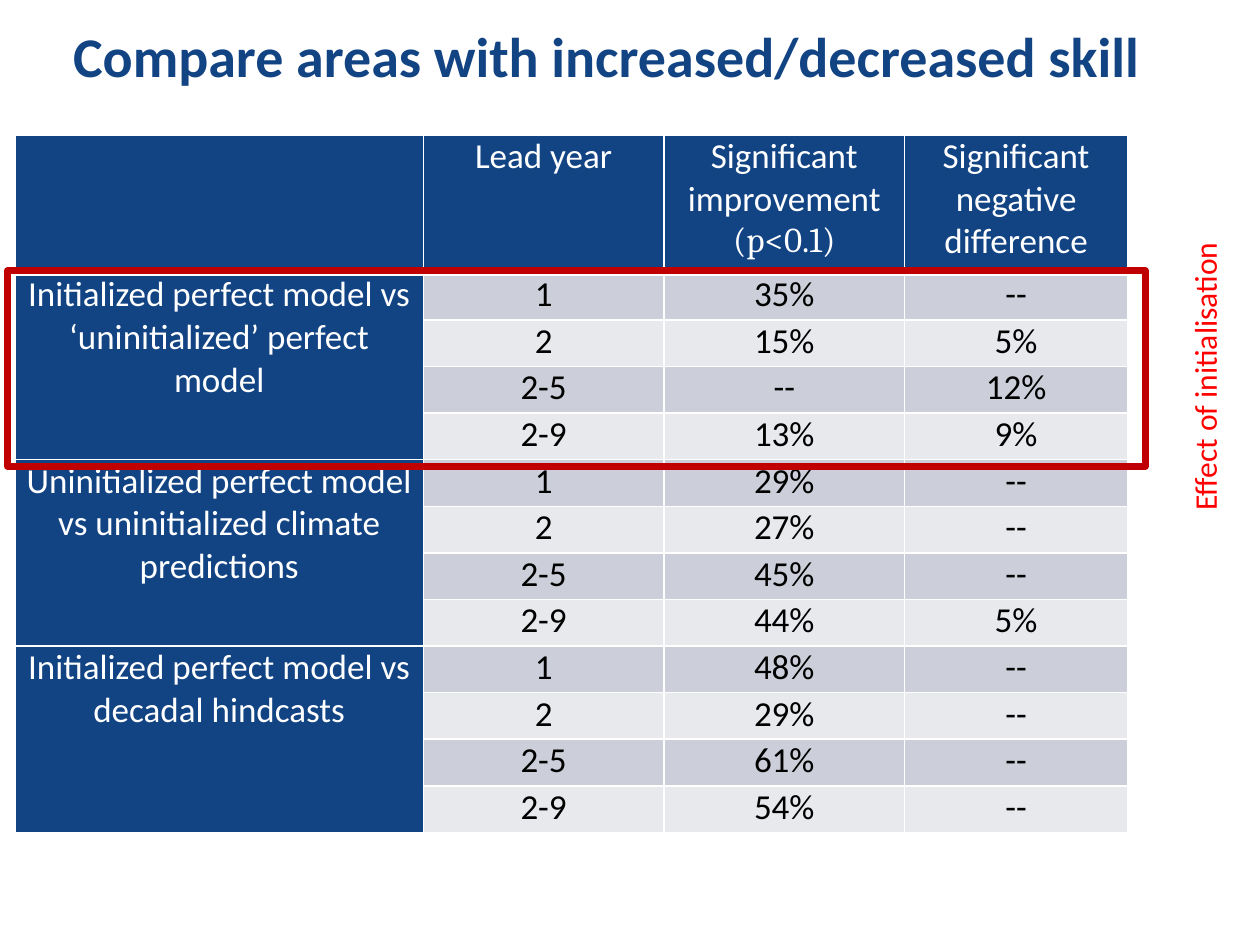
from lxml import etree
from pptx import Presentation
from pptx.dml.color import RGBColor
from pptx.enum.shapes import MSO_SHAPE
from pptx.enum.text import MSO_ANCHOR, PP_ALIGN
from pptx.oxml.ns import qn
from pptx.util import Inches, Pt

CENTER, LEFT = PP_ALIGN.CENTER, PP_ALIGN.LEFT
MIDDLE = MSO_ANCHOR.MIDDLE
RECTANGLE = MSO_SHAPE.RECTANGLE

NAVY = RGBColor(0x12, 0x44, 0x84)
WHITE = RGBColor(0xFF, 0xFF, 0xFF)
BLACK = RGBColor(0, 0, 0)
BANDS = [RGBColor(0xCC, 0xCF, 0xD9), RGBColor(0xE7, 0xE9, 0xED)]
DARK_RED = RGBColor(0xC0, 0, 0)
RED = RGBColor(0xFF, 0, 0)

# Content
TITLE = "Compare areas with increased/decreased skill"
SIDE_LABEL = "Effect of initialisation"
HEADERS = [
    [],
    [("Lead year", "Calibri")],
    [("Significant improvement", "Calibri"), ("(p<0.1)", "Cambria")],
    [("Significant negative difference", "Calibri")],
]
LEAD_YEARS = ["1", "2", "2-5", "2-9"]
GROUPS = [
    ("Initialized perfect model vs ‘uninitialized’ perfect model",
     [("35%", "--"), ("15%", "5%"), ("--", "12%"), ("13%", "9%")]),
    ("Uninitialized perfect model vs uninitialized climate predictions",
     [("29%", "--"), ("27%", "--"), ("45%", "--"), ("44%", "5%")]),
    ("Initialized perfect model vs decadal hindcasts",
     [("48%", "--"), ("29%", "--"), ("61%", "--"), ("54%", "--")]),
]
COL_WIDTHS = [3.24, 1.91, 1.91, 1.77]
HEADER_HEIGHT, ROW_HEIGHT = 1.1, 0.37


def write(tf, lines, size, color, align=CENTER, bold=False):
    for i, (text, font) in enumerate(lines):
        p = tf.add_paragraph() if i else tf.paragraphs[0]
        p.alignment = align
        r = p.add_run()
        r.text = text
        r.font.color.rgb = color
        for name, value in {"name": font, "size": Pt(size), "bold": bold}.items():
            setattr(r.font, name, value)


def add_label(s, box, text, size, color, **style):
    tf = s.shapes.add_textbox(*map(Inches, box)).text_frame
    write(tf, [(text, "Calibri")], size, color, **style)
    return tf


def style_cell(cell, fill, bottom=1):
    margins = {"margin_left": 0.07, "margin_right": 0.07,
               "margin_top": 0, "margin_bottom": 0}
    for name, value in margins.items():
        setattr(cell, name, Inches(value))
    # Borders come before the fill in the cell properties
    tc_pr = cell._tc.get_or_add_tcPr()
    for side, width in {"L": 1, "R": 1, "T": 1, "B": bottom}.items():
        ln = etree.SubElement(tc_pr, qn(f"a:ln{side}"), w=str(Pt(width)))
        solid = etree.SubElement(ln, qn("a:solidFill"))
        etree.SubElement(solid, qn("a:srgbClr"), val=str(WHITE))
    cell.fill.solid()
    cell.fill.fore_color.rgb = fill


def add_skill_table(s):
    count = len(LEAD_YEARS)
    n_rows = 1 + count * len(GROUPS)
    heights = [HEADER_HEIGHT] + [ROW_HEIGHT] * (n_rows - 1)
    table = s.shapes.add_table(
        n_rows, len(COL_WIDTHS), Inches(0.12), Inches(1.07),
        Inches(sum(COL_WIDTHS)), Inches(sum(heights))).table
    for col, width in zip(table.columns, COL_WIDTHS):
        col.width = Inches(width)
    for row, height in zip(table.rows, heights):
        row.height = Inches(height)

    # Header row
    for c, lines in enumerate(HEADERS):
        cell = table.cell(0, c)
        style_cell(cell, NAVY, bottom=3)
        write(cell.text_frame, lines, 20, WHITE)

    # One merged label and four lead years per group
    for g, (label, results) in enumerate(GROUPS):
        top = 1 + g * count
        for i, (year, result) in enumerate(zip(LEAD_YEARS, results)):
            style_cell(table.cell(top + i, 0), NAVY)
            for c, value in enumerate((year, *result), start=1):
                cell = table.cell(top + i, c)
                style_cell(cell, BANDS[i % 2])
                write(cell.text_frame, [(value, "Calibri")], 20, BLACK)
        first = table.cell(top, 0)
        first.merge(table.cell(top + count - 1, 0))
        write(first.text_frame, [(label, "Calibri")], 20, WHITE)


def main():
    prs = Presentation()
    prs.slide_width, prs.slide_height = Inches(10), Inches(7.5)
    s = prs.slides.add_slide(prs.slide_layouts[6])

    # Title
    tf = add_label(s, (0.12, 0.15, 9.39, 0.64), TITLE, 32, NAVY, bold=True)
    tf.word_wrap = True
    tf.vertical_anchor = MIDDLE
    tf.paragraphs[0].line_spacing = 0.9

    add_skill_table(s)

    # Frame around the first group
    frame = s.shapes.add_shape(
        RECTANGLE, *map(Inches, (0.06, 2.15, 9.03, 1.55)))
    frame.shadow.inherit = False
    frame.fill.background()
    frame.line.color.rgb = DARK_RED
    frame.line.width = Pt(4)

    # Vertical label beside the frame
    tf = add_label(s, (8.38, 2.77, 2.36, 0.4), SIDE_LABEL, 18, RED, align=LEFT)
    tf.word_wrap = False
    s.shapes[-1].rotation = 270

    prs.save("out.pptx")


if __name__ == "__main__":
    main()
